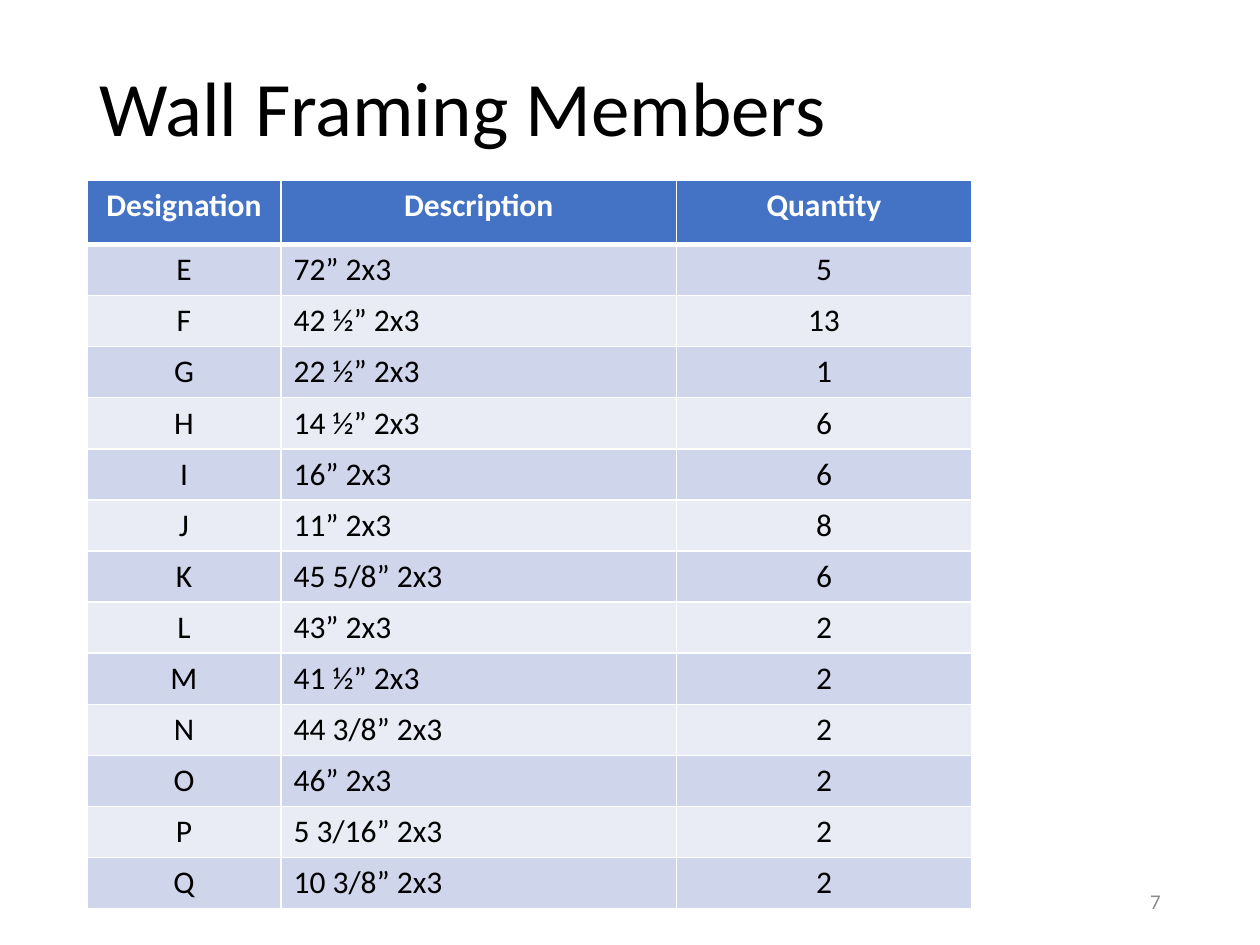
from pptx import Presentation
from pptx.dml.color import RGBColor as RGB
from pptx.enum.text import MSO_ANCHOR as ANCHOR, PP_ALIGN as ALIGN
from pptx.oxml.ns import qn
from pptx.util import Inches, Pt
from lxml.etree import SubElement

COLORS = {"text": "000000", "white": "FFFFFF", "header": "4472C4",
          "odd": "CFD5EA", "even": "E9EBF5", "number": "8C8C8C"}
MEMBERS = [
    ("Designation", "Description", "Quantity"),
    ("E", "72” 2x3", "5"),
    ("F", "42 ½” 2x3", "13"),
    ("G", "22 ½” 2x3", "1"),
    ("H", "14 ½” 2x3", "6"),
    ("I", "16” 2x3", "6"),
    ("J", "11” 2x3", "8"),
    ("K", "45 5/8” 2x3", "6"),
    ("L", "43” 2x3", "2"),
    ("M", "41 ½” 2x3", "2"),
    ("N", "44 3/8” 2x3", "2"),
    ("O", "46” 2x3", "2"),
    ("P", "5 3/16” 2x3", "2"),
    ("Q", "10 3/8” 2x3", "2"),
]
COLUMNS = [1.54, 3.14, 2.34]
ROWS = [0.51] + [0.4055] * (len(MEMBERS) - 1)
MARGIN = 0.69


def style(p, size, color, align, bold=False):
    p.alignment = align
    for r in p.runs:
        r.font.name = "Calibri"
        r.font.size = Pt(size)
        r.font.bold = bold
        r.font.color.rgb = RGB.from_string(COLORS[color])


def border(cell, side, width):
    ln = SubElement(cell._tc.get_or_add_tcPr(), qn(f"a:ln{side}"), w=str(Pt(width)))
    fill = SubElement(ln, qn("a:solidFill"))
    SubElement(fill, qn("a:srgbClr"), val=COLORS["white"])


prs = Presentation()
prs.slide_width, prs.slide_height = Inches(10), Inches(7.5)
s = prs.slides.add_slide(prs.slide_layouts[5])

title = s.shapes.title
title.left, title.top = Inches(MARGIN), Inches(0.16)
title.width, title.height = Inches(10 - 2 * MARGIN), Inches(1.45)
tf = title.text_frame
tf.text = "Wall Framing Members"
tf.vertical_anchor = ANCHOR.MIDDLE
tf.paragraphs[0].line_spacing = 0.9
style(tf.paragraphs[0], 44, "text", ALIGN.LEFT)

table = s.shapes.add_table(len(ROWS), len(COLUMNS), Inches(MARGIN), Inches(1.43),
                           Inches(sum(COLUMNS)), Inches(sum(ROWS))).table
for column, width in zip(table.columns, COLUMNS):
    column.width = Inches(width)
for row, height in zip(table.rows, ROWS):
    row.height = Inches(height)

for i, member in enumerate(MEMBERS):
    header = i == 0
    band = "header" if header else "odd" if i % 2 else "even"
    for j, text in enumerate(member):
        cell = table.cell(i, j)
        cell.text_frame.text = text
        align = ALIGN.LEFT if j == 1 and not header else ALIGN.CENTER
        style(cell.text_frame.paragraphs[0], 18, "white" if header else "text", align, header)
        for side in "LRTB":
            thick = (header and side == "B") or (i == 1 and side == "T")
            border(cell, side, 3 if thick else 1)
        cell.fill.solid()
        cell.fill.fore_color.rgb = RGB.from_string(COLORS[band])

number = s.shapes.add_textbox(Inches(10 - MARGIN - 2.25), Inches(6.95), Inches(2.25), Inches(0.4))
tf = number.text_frame
tf.word_wrap = True
tf.vertical_anchor = ANCHOR.MIDDLE
tf.text = "7"
style(tf.paragraphs[0], 12, "number", ALIGN.RIGHT)

prs.save("out.pptx")
